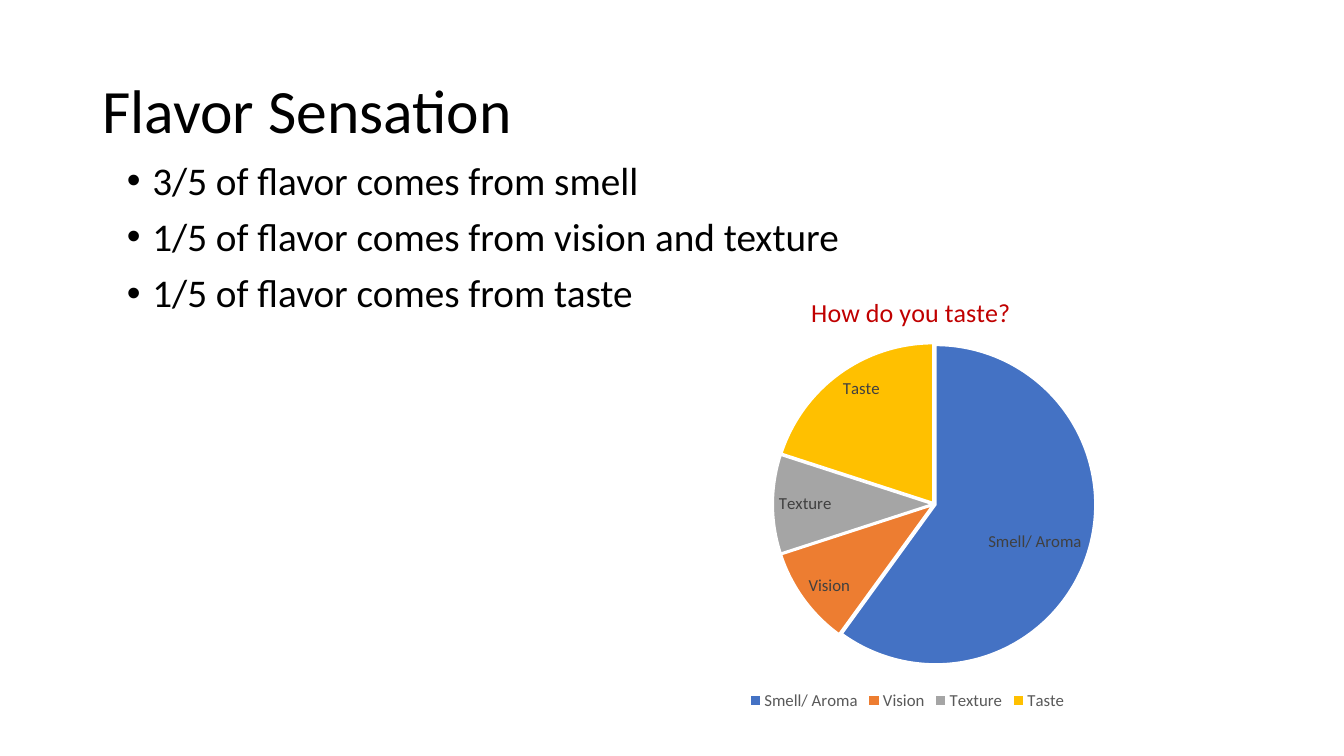
import pptx
import pptx.util
import pptx.chart.data
import pptx.dml.color
import pptx.enum.chart
import pptx.enum.text
import pptx.oxml
import pptx.oxml.ns
from pptx.util import Cm, Pt

COLORS = {
    "text": "000000",
    "white": "FFFFFF",
    "chart title": "C00000",
    "label": "404040",
    "legend": "595959",
}
SLICES = [
    ("Smell/ Aroma", 60, "4472C4"),
    ("Vision", 10, "ED7D31"),
    ("Texture", 10, "A5A5A5"),
    ("Taste", 20, "FFC000"),
]
FLAVOR_SOURCES = [
    "3/5 of flavor comes from smell",
    "1/5 of flavor comes from vision and texture",
    "1/5 of flavor comes from taste",
]


def rgb(value):
    return pptx.dml.color.RGBColor.from_string(value)


class SlideBuilder:
    """Holds the style and the current slide."""

    def __init__(self, slide, font_name="Calibri"):
        self.slide = slide
        self.font_name = font_name

    def style_font(self, font, size, color):
        font.name = self.font_name
        font.size = Pt(size)
        font.bold = False
        font.color.rgb = rgb(COLORS[color])

    def add_text(self, box, lines, size, anchor, bulleted=False):
        frame = self.slide.shapes.add_textbox(*map(Cm, box)).text_frame
        frame.word_wrap = True
        frame.vertical_anchor = anchor
        for index, line in enumerate(lines):
            paragraph = frame.add_paragraph() if index else frame.paragraphs[0]
            paragraph.line_spacing = 0.9
            if bulleted:
                paragraph.space_before = Pt(10)
                self.add_bullet(paragraph)
            run = paragraph.add_run()
            run.text = line
            self.style_font(run.font, size, "text")

    def add_bullet(self, paragraph):
        properties = paragraph._p.get_or_add_pPr()
        indent = Cm(0.64)
        properties.set("marL", str(indent))
        properties.set("indent", str(-indent))
        for tag, attribute, value in (("a:buFont", "typeface", "Arial"),
                                      ("a:buChar", "char", "•")):
            bullet = pptx.oxml.ns.qn(tag)
            properties.append(properties.makeelement(bullet, {attribute: value}))

    def set_layout(self, parent, before, **settings):
        """Place a chart part by fractions of the chart area."""
        for layout in parent.findall(pptx.oxml.ns.qn("c:layout")):
            parent.remove(layout)
        items = "".join(f'<c:{tag} val="{value}"/>' for tag, value in settings.items())
        layout = pptx.oxml.parse_xml(
            f'<c:layout {pptx.oxml.ns.nsdecls("c")}>'
            f"<c:manualLayout>{items}</c:manualLayout></c:layout>")
        parent.find(pptx.oxml.ns.qn(before)).addprevious(layout)

    def add_pie(self, box, title, slices):
        data = pptx.chart.data.CategoryChartData()
        data.categories = [name for name, _, _ in slices]
        data.add_series("Series 1", [value for _, value, _ in slices])
        chart = self.slide.shapes.add_chart(
            pptx.enum.chart.XL_CHART_TYPE.PIE, *map(Cm, box), data).chart
        self.style_font(chart.font, 10, "text")

        # Chart title
        chart.has_title = True
        run = chart.chart_title.text_frame.paragraphs[0].add_run()
        run.text = title
        self.style_font(run.font, 18.6, "chart title")
        chart.chart_title.include_in_layout = False
        self.set_layout(chart.chart_title._element, "c:overlay",
                        xMode="edge", yMode="edge", x=0.35, y=0.05)

        # Legend
        chart.has_legend = True
        chart.legend.position = pptx.enum.chart.XL_LEGEND_POSITION.BOTTOM
        chart.legend.include_in_layout = False
        self.style_font(chart.legend.font, 12, "legend")

        # Slices
        plot = chart.plots[0]
        plot.vary_by_categories = True
        series = plot.series[0]
        for index, (_, _, color) in enumerate(slices):
            point_format = series.points[index].format
            point_format.fill.solid()
            point_format.fill.fore_color.rgb = rgb(color)
            point_format.line.color.rgb = rgb(COLORS["white"])
            point_format.line.width = Pt(1.5)
        explosion = series._element.makeelement(
            pptx.oxml.ns.qn("c:explosion"), {"val": "1"})
        series._element.find(pptx.oxml.ns.qn("c:dPt")).addprevious(explosion)

        # Category labels
        labels = series.data_labels
        labels.show_category_name = True
        labels.show_value = False
        labels.show_percentage = False
        labels.position = pptx.enum.chart.XL_LABEL_POSITION.INSIDE_END
        self.style_font(labels.font, 12, "label")

        self.set_layout(plot._element.getparent(), "c:pieChart",
                        layoutTarget="inner", xMode="edge", yMode="edge",
                        x=0.3, y=0.17, w=0.48, h=0.72)


def main():
    presentation = pptx.Presentation()
    presentation.slide_width = Cm(33.87)
    presentation.slide_height = Cm(19.05)
    slide = presentation.slides.add_slide(presentation.slide_layouts[6])
    builder = SlideBuilder(slide)
    anchors = pptx.enum.text.MSO_ANCHOR

    # Heading and bullet list
    builder.add_text((2.33, 1.01, 29.21, 3.68), ["Flavor Sensation"], 44, anchors.MIDDLE)
    builder.add_text((2.95, 3.94, 20.96, 3.56), FLAVOR_SOURCES, 28, anchors.TOP,
                     bulleted=True)

    # Pie of the senses
    builder.add_pie((14.4, 6.73, 16.93, 11.28), "How do you taste?", SLICES)

    presentation.save("out.pptx")


if __name__ == "__main__":
    main()
